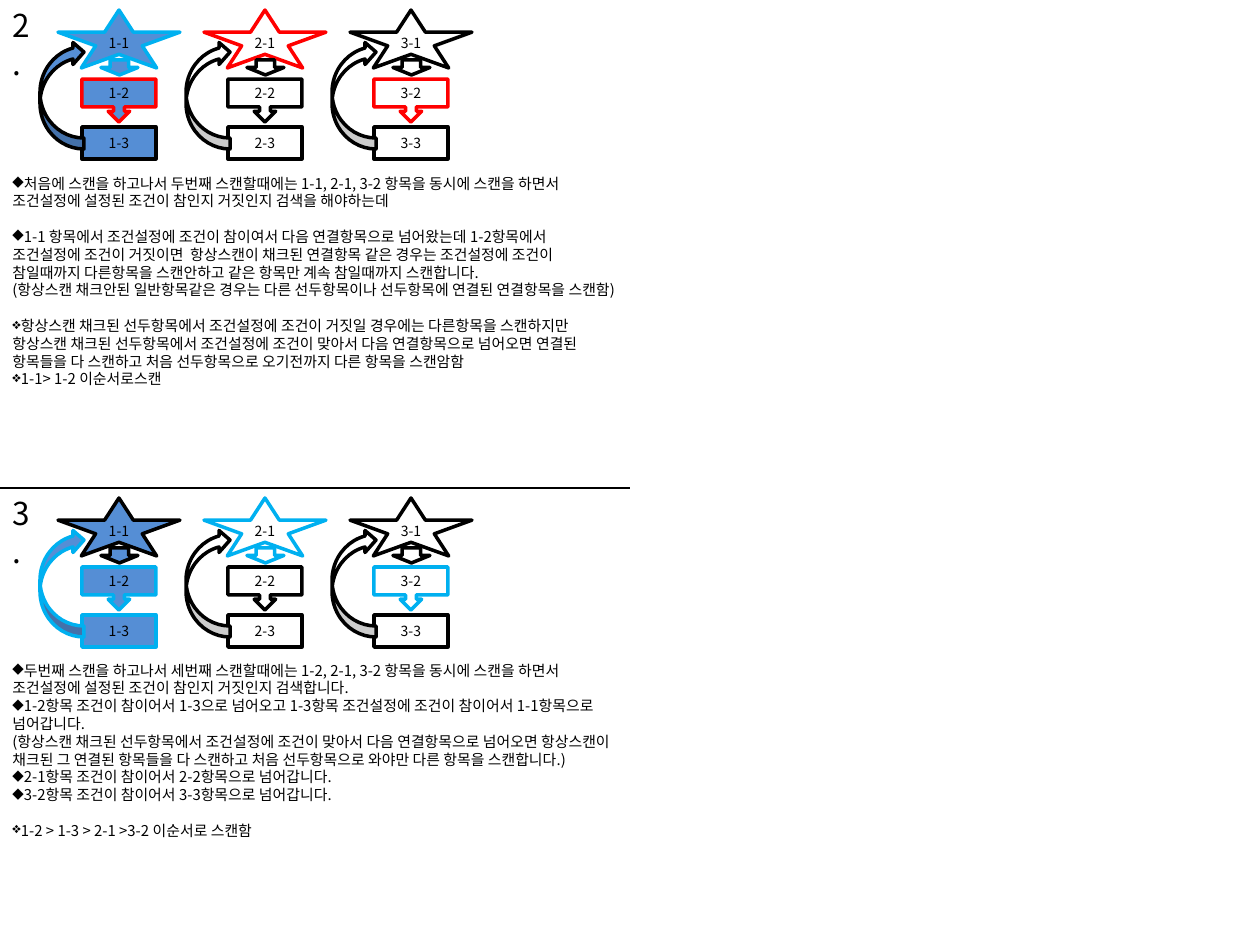
import lxml.etree
import pptx
import pptx.dml.color
import pptx.enum.shapes
import pptx.enum.text
import pptx.oxml.ns
import pptx.util

PX = 914400 / 126
FONT = "Noto Sans CJK KR"
COLORS = {"blue": "558ED5", "white": "FFFFFF", "black": "000000",
          "red": "FF0000", "cyan": "00B0F0"}
KINDS = pptx.enum.shapes.MSO_SHAPE
COLUMN_PITCH, ROW_PITCH = 146, 488

# preset, left, top, width, height, rotation, item number within the column
PARTS = [
    (KINDS.STAR_5_POINT, 58, 10, 122, 58, 0, 1),
    (KINDS.RECTANGLE, 82, 127, 74, 32, 0, 3),
    (KINDS.DOWN_ARROW_CALLOUT, 82, 79, 74, 43, 0, 2),
    (KINDS.DOWN_ARROW, 101, 60, 37, 15, 0, None),
    (KINDS.CURVED_DOWN_ARROW, 8, 73, 108, 44, 270, None),
]

# Outline colours follow the order of PARTS; notes are (bullet, gap above, text).
STEPS = [
    {
        "number": "2.",
        "outlines": ["cyan black red cyan black",
                     "red black black black black",
                     "black black red black black"],
        "notes_box": (168, 247),
        "notes": [
            ("◆", False, "처음에 스캔을 하고나서 두번째 스캔할때에는 1-1, 2-1, 3-2 항목을 동시에 스캔을 하면서 "
             "조건설정에 설정된 조건이 참인지 거짓인지 검색을 해야하는데"),
            ("◆", True, "1-1 항목에서 조건설정에 조건이 참이여서 다음 연결항목으로 넘어왔는데 1-2항목에서 "
             "조건설정에 조건이 거짓이면  항상스캔이 채크된 연결항목 같은 경우는 조건설정에 조건이 "
             "참일때까지 다른항목을 스캔안하고 같은 항목만 계속 참일때까지 스캔합니다."),
            (None, False, "(항상스캔 채크안된 일반항목같은 경우는 다른 선두항목이나 선두항목에 연결된 "
             "연결항목을 스캔함)"),
            ("❖", True, "항상스캔 채크된 선두항목에서 조건설정에 조건이 거짓일 경우에는 다른항목을 스캔하지만 "
             "항상스캔 채크된 선두항목에서 조건설정에 조건이 맞아서 다음 연결항목으로 넘어오면 연결된 "
             "항목들을 다 스캔하고 처음 선두항목으로 오기전까지 다른 항목을 스캔암함"),
            ("❖", False, "1-1> 1-2 이순서로스캔"),
        ],
    },
    {
        "number": "3.",
        "outlines": ["black cyan cyan black cyan",
                     "cyan black black cyan black",
                     "black black cyan black black"],
        "notes_box": (655, 210),
        "notes": [
            ("◆", False, "두번째 스캔을 하고나서 세번째 스캔할때에는 1-2, 2-1, 3-2 항목을 동시에 스캔을 하면서 "
             "조건설정에 설정된 조건이 참인지 거짓인지 검색합니다."),
            ("◆", False, "1-2항목 조건이 참이어서 1-3으로 넘어오고 1-3항목 조건설정에 조건이 참이어서 "
             "1-1항목으로 넘어갑니다.\n"
             "(항상스캔 채크된 선두항목에서 조건설정에 조건이 맞아서 다음 연결항목으로 넘어오면 "
             "항상스캔이 채크된 그 연결된 항목들을 다 스캔하고 처음 선두항목으로 와야만 다른 항목을 "
             "스캔합니다.)"),
            ("◆", False, "2-1항목 조건이 참이어서 2-2항목으로 넘어갑니다."),
            ("◆", False, "3-2항목 조건이 참이어서 3-3항목으로 넘어갑니다."),
            ("❖", True, "1-2 > 1-3 > 2-1 >3-2 이순서로 스캔함"),
        ],
    },
]


def add_text(para, text, size):
    """Add one run per line, with line breaks between them."""
    for index, line in enumerate(text.split("\n")):
        if index:
            para.add_line_break()
        span = para.add_run()
        span.text = line
        span.font.size = pptx.util.Pt(size)
        span.font.name = FONT
        span.font.color.rgb = pptx.dml.color.RGBColor.from_string(COLORS["black"])
        east_asian = lxml.etree.SubElement(span.font._element, pptx.oxml.ns.qn("a:ea"))
        east_asian.set("typeface", FONT)


def add_text_box(*frame):
    box = slide.shapes.add_textbox(*[int(length * PX) for length in frame])
    box.text_frame.word_wrap = True
    box.text_frame.auto_size = pptx.enum.text.MSO_AUTO_SIZE.SHAPE_TO_FIT_TEXT
    return box.text_frame


deck = pptx.Presentation()
deck.slide_width = pptx.util.Inches(10)
deck.slide_height = pptx.util.Inches(7.5)
slide = deck.slides.add_slide(deck.slide_layouts[6])

for row, step in enumerate(STEPS):
    group = slide.shapes.add_group_shape()
    for column, outlines in enumerate(step["outlines"]):
        for part, outline in zip(PARTS, outlines.split()):
            kind, left, top, width, height, rotation, item = part
            frame = (left + column * COLUMN_PITCH, top + row * ROW_PITCH, width, height)
            shape = group.shapes.add_shape(kind, *[int(length * PX) for length in frame])
            shape.rotation = rotation
            shape.shadow.inherit = False
            shape.fill.solid()
            shape.fill.fore_color.rgb = pptx.dml.color.RGBColor.from_string(
                COLORS["white" if column else "blue"])
            shape.line.color.rgb = pptx.dml.color.RGBColor.from_string(COLORS[outline])
            shape.line.width = pptx.util.Pt(2)
            if item:
                label = shape.text_frame
                label.word_wrap = False
                label.margin_left = label.margin_right = 0
                label.margin_top = label.margin_bottom = 0
                label.vertical_anchor = pptx.enum.text.MSO_ANCHOR.MIDDLE
                para = label.paragraphs[0]
                para.alignment = pptx.enum.text.PP_ALIGN.CENTER
                add_text(para, f"{column + 1}-{item}", 8)

    top, height = step["notes_box"]
    notes = add_text_box(0, top, 630, height)
    for index, (bullet, gap, text) in enumerate(step["notes"]):
        para = notes.add_paragraph() if index else notes.paragraphs[0]
        para.line_spacing = pptx.util.Pt(10.2)
        if gap:
            para.space_before = pptx.util.Pt(10.2)
        if bullet:
            properties = para._p.get_or_add_pPr()
            properties.set("marL", "0")
            properties.set("indent", "0")
            mark = lxml.etree.SubElement(properties, pptx.oxml.ns.qn("a:buChar"))
            mark.set("char", bullet)
        add_text(para, text, 8.5)

    number = add_text_box(0, row * ROW_PITCH, 50, 50)
    add_text(number.paragraphs[0], step["number"], 18)

divider = slide.shapes.add_connector(
    pptx.enum.shapes.MSO_CONNECTOR.STRAIGHT,
    0, int(ROW_PITCH * PX), int(630 * PX), int(ROW_PITCH * PX))
divider.line.color.rgb = pptx.dml.color.RGBColor.from_string(COLORS["black"])
divider.line.width = pptx.util.Pt(1.5)
lxml.etree.SubElement(divider._element.spPr, pptx.oxml.ns.qn("a:effectLst"))

deck.save("out.pptx")
